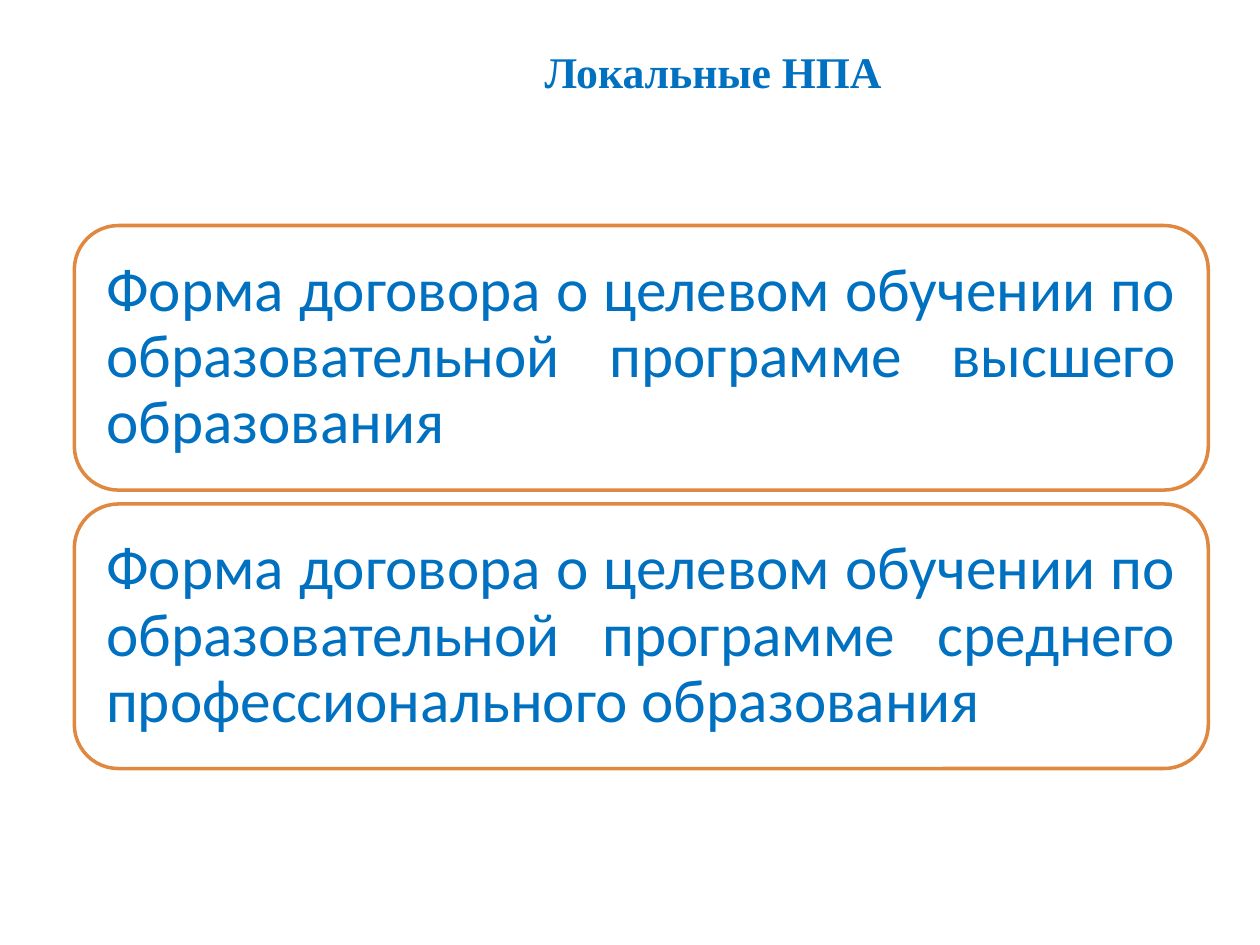
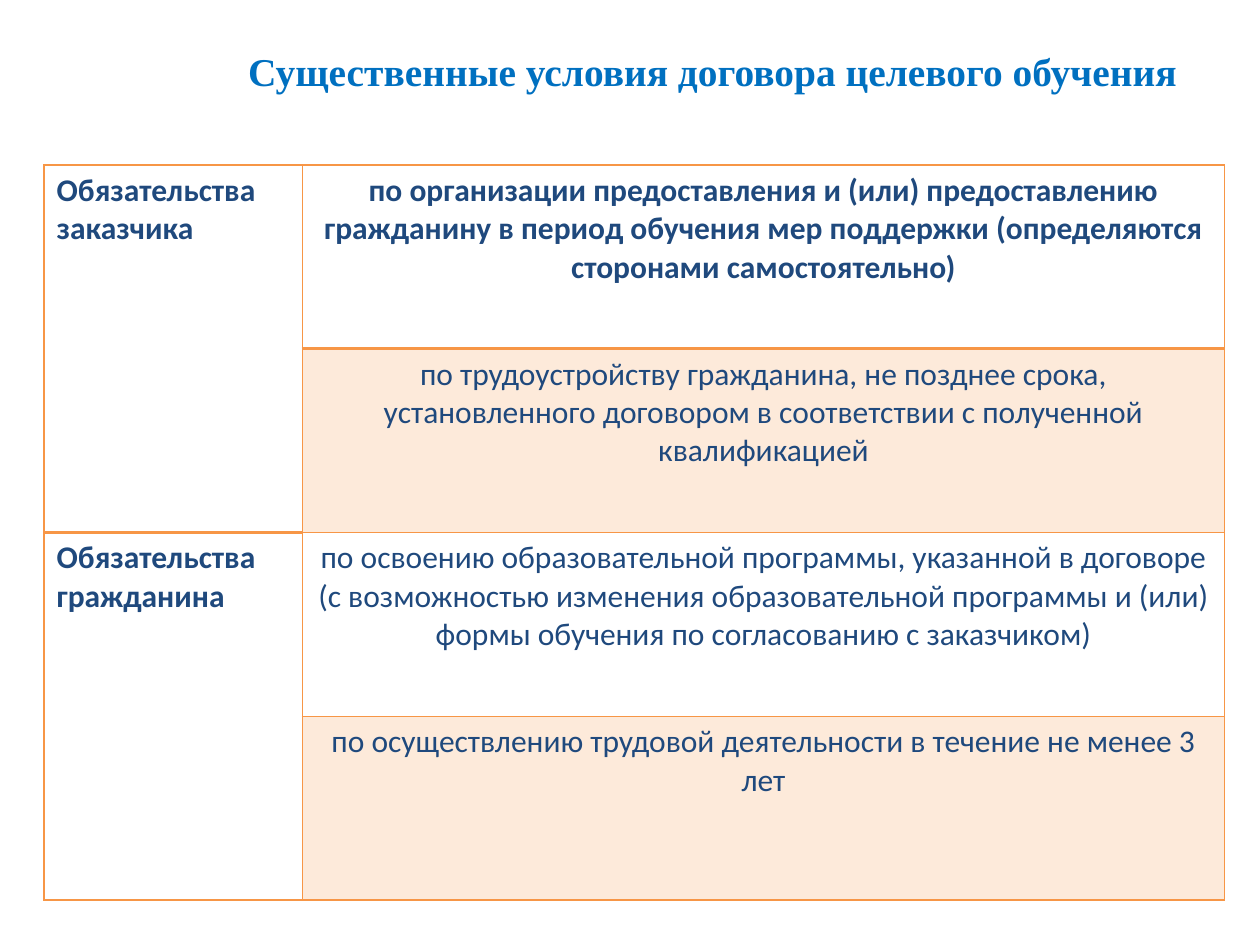
from lxml import etree
from pptx import Presentation
from pptx.dml.color import RGBColor
from pptx.enum.shapes import MSO_SHAPE
from pptx.enum.text import MSO_ANCHOR, PP_ALIGN
from pptx.oxml.ns import qn
from pptx.util import Pt

ROUNDED = MSO_SHAPE.ROUNDED_RECTANGLE
MIDDLE = MSO_ANCHOR.MIDDLE
LEFT, CENTER, JUSTIFY = PP_ALIGN.LEFT, PP_ALIGN.CENTER, PP_ALIGN.JUSTIFY

BLUE = RGBColor(0x00, 0x70, 0xC0)
NAVY = RGBColor(0x1F, 0x49, 0x7D)
ORANGE = RGBColor(0xF7, 0x96, 0x46)
FRAME_ORANGE = RGBColor(0xE0, 0x88, 0x40)
PEACH = RGBColor(0xFD, 0xEA, 0xDA)
WHITE = RGBColor(0xFF, 0xFF, 0xFF)
TITLE_FONT, BODY_FONT = "Times New Roman", "Calibri"

# Boxes are (left, top, width, height) in points
TITLE_BOX = (108.72, 15.84, 597.6, 49.68)
FORMS_BOX = (42.5, 128.9, 648, 310.3)
TERMS_BOX = (25.2, 94.3, 674.6, 420)

FORMS = [
    "Форма договора о целевом обучении по образовательной программе "
    "высшего образования",
    "Форма договора о целевом обучении по образовательной программе "
    "среднего профессионального образования",
]
# Each party has its duties as (text, bold)
TERMS = [
    ("Обязательства заказчика", [
        ("по организации предоставления и (или) предоставлению гражданину "
         "в период обучения мер поддержки (определяются сторонами "
         "самостоятельно)", True),
        ("по трудоустройству гражданина, не позднее срока, установленного "
         "договором в соответствии с полученной квалификацией", False),
    ]),
    ("Обязательства гражданина", [
        ("по освоению образовательной программы, указанной в договоре "
         "(с возможностью изменения образовательной программы и (или) формы "
         "обучения по согласованию с заказчиком)", False),
        ("по осуществлению трудовой деятельности в течение не менее 3 лет",
         False),
    ]),
]


def write(frame, text, font_name, size, color, align, bold=False):
    frame.text = text
    paragraph = frame.paragraphs[0]
    paragraph.alignment = align
    font = paragraph.runs[0].font
    font.name, font.size, font.bold = font_name, Pt(size), bold
    font.color.rgb = color
    return paragraph


def add_titled_slide(prs, title, size):
    slide = prs.slides.add_slide(prs.slide_layouts[6])
    frame = slide.shapes.add_textbox(*map(Pt, TITLE_BOX)).text_frame
    frame.word_wrap = True
    frame.vertical_anchor = MIDDLE
    write(frame, title, TITLE_FONT, size, BLUE, CENTER, True)
    return slide


def add_form_cards(slide, box, forms, gap=7.9):
    left, top, width, height = box
    card_height = (height - gap * (len(forms) - 1)) / len(forms)
    for i, form in enumerate(forms):
        card = slide.shapes.add_shape(
            ROUNDED, Pt(left), Pt(top + i * (card_height + gap)),
            Pt(width), Pt(card_height))
        card.shadow.inherit = False
        card.fill.solid()
        card.fill.fore_color.rgb = WHITE
        card.line.color.rgb = FRAME_ORANGE
        card.line.width = Pt(2)
        frame = card.text_frame
        frame.word_wrap = True
        frame.vertical_anchor = MIDDLE
        # The rounded outline already insets its text by about 7 pt
        frame.margin_left = frame.margin_right = Pt(10.8)
        frame.margin_top = frame.margin_bottom = Pt(10.8)
        paragraph = write(frame, form, BODY_FONT, 35, BLUE, JUSTIFY)
        paragraph.line_spacing = 0.9


def set_borders(cell, top, bottom):
    """Draw orange borders; top and bottom are widths in points."""
    properties = cell._tc.get_or_add_tcPr()
    for side, width in (("L", 1), ("R", 1), ("T", top), ("B", bottom)):
        line = etree.SubElement(properties, qn(f"a:ln{side}"), w=str(Pt(width)))
        fill = etree.SubElement(line, qn("a:solidFill"))
        etree.SubElement(fill, qn("a:srgbClr"), val=str(ORANGE))


def add_terms_table(slide, box, terms, party_width=147.6):
    duties = [duty for _, party_duties in terms for duty in party_duties]
    table = slide.shapes.add_table(len(duties), 2, *map(Pt, box)).table
    table.first_row = table.horz_banding = False
    table.columns[0].width = Pt(party_width)
    table.columns[1].width = Pt(box[2] - party_width)

    # The heavy rule lies under the first duty and under the first party
    heavy_rows = (len(terms[0][1]), 1)
    for row in range(len(duties)):
        for column, heavy_row in enumerate(heavy_rows):
            cell = table.cell(row, column)
            set_borders(cell, 2 if row == heavy_row else 1,
                        2 if row + 1 == heavy_row else 1)
            cell.fill.solid()
            shaded = column == 1 and row % 2 == 1
            cell.fill.fore_color.rgb = PEACH if shaded else WHITE

    for row, (duty, bold) in enumerate(duties):
        write(table.cell(row, 1).text_frame, duty, BODY_FONT, 18, NAVY,
              CENTER, bold)
    row = 0
    for party, party_duties in terms:
        party_cell = table.cell(row, 0)
        row += len(party_duties)
        party_cell.merge(table.cell(row - 1, 0))
        write(party_cell.text_frame, party, BODY_FONT, 18, NAVY, LEFT, True)


def main():
    prs = Presentation()
    prs.slide_width, prs.slide_height = Pt(720), Pt(540)
    forms_slide = add_titled_slide(prs, "Локальные НПА", 25)
    add_form_cards(forms_slide, FORMS_BOX, FORMS)
    terms_slide = add_titled_slide(
        prs, "Существенные условия договора целевого обучения", 22.5)
    add_terms_table(terms_slide, TERMS_BOX, TERMS)
    prs.save("out.pptx")


if __name__ == "__main__":
    main()
